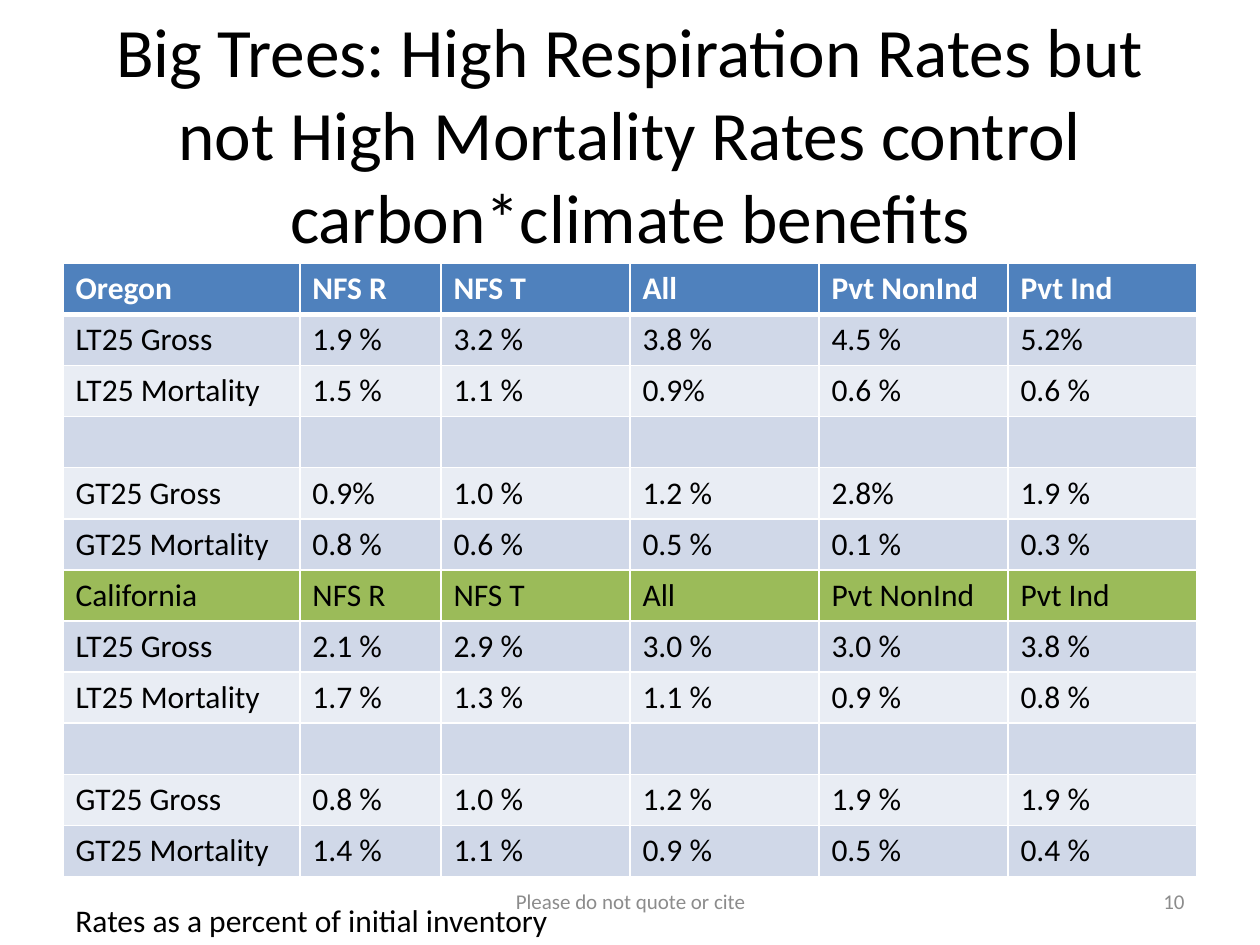
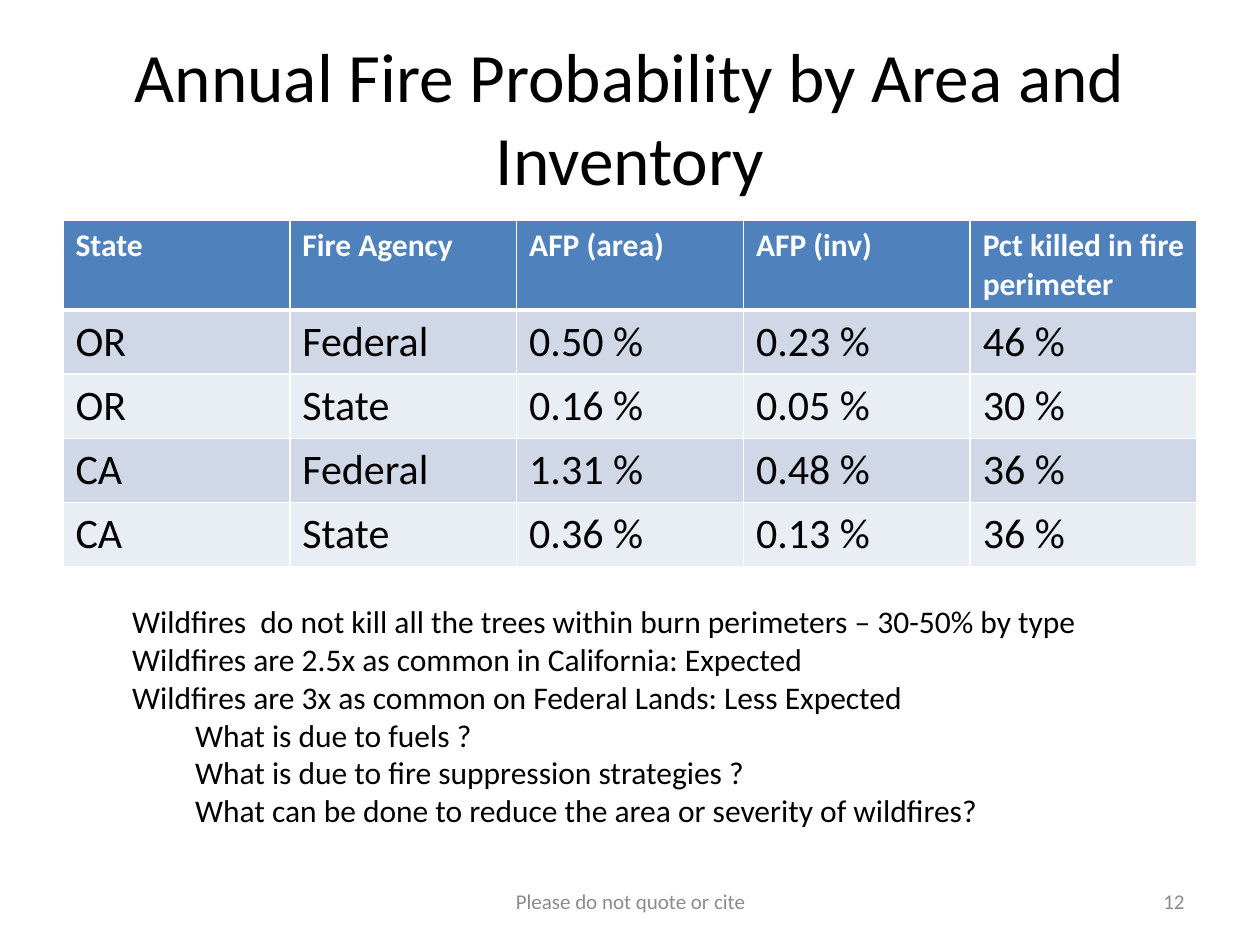
"""Build two slides of tables on forest carbon and wildfire rates."""
from dataclasses import dataclass

from lxml.etree import SubElement
from pptx import Presentation
from pptx.dml.color import RGBColor
from pptx.enum.text import MSO_ANCHOR, PP_ALIGN
from pptx.oxml.ns import qn
from pptx.util import Inches, Pt


@dataclass(frozen=True)
class Theme:
    """Colours, font and type sizes shared by the slides."""
    font: str = "Calibri"
    ink: str = "000000"
    white: str = "FFFFFF"
    header: str = "4F81BD"
    section: str = "9BBB59"
    bands: tuple = ("D0D8E8", "E9EDF4")
    muted: str = "8C8C8C"
    title_size: float = 39.6
    body_size: float = 18
    large_size: float = 24
    footer_size: float = 12
    thin_rule: float = 1
    thick_rule: float = 3


THEME = Theme()
MARGIN = 0.5
OWNERS = ["NFS R", "NFS T", "All", "Pvt NonInd", "Pvt Ind"]
MORTALITY_ROWS = [
    ["Oregon", *OWNERS],
    ["LT25 Gross", "1.9 %", "3.2 %", "3.8 %", "4.5 %", "5.2%"],
    ["LT25 Mortality", "1.5 %", "1.1 %", "0.9%", "0.6 %", "0.6 %"],
    [""] * 6,
    ["GT25 Gross", "0.9%", "1.0 %", "1.2 %", "2.8%", "1.9 %"],
    ["GT25 Mortality", "0.8 %", "0.6 %", "0.5 %", "0.1 %", "0.3 %"],
    ["California", *OWNERS],
    ["LT25 Gross", "2.1 %", "2.9 %", "3.0 %", "3.0 %", "3.8 %"],
    ["LT25 Mortality", "1.7 %", "1.3 %", "1.1 %", "0.9 %", "0.8 %"],
    [""] * 6,
    ["GT25 Gross", "0.8 %", "1.0 %", "1.2 %", "1.9 %", "1.9 %"],
    ["GT25 Mortality", "1.4 %", "1.1 %", "0.9 %", "0.5 %", "0.4 %"],
]
CALIFORNIA_ROW = 6
FIRE_ROWS = [
    ["State", "Fire Agency", "AFP (area)", "AFP (inv)", "Pct killed in fire perimeter"],
    ["OR", "Federal", "0.50 %", "0.23 %", "46 %"],
    ["OR", "State", "0.16 %", "0.05 %", "30 %"],
    ["CA", "Federal", "1.31 %", "0.48 %", "36 %"],
    ["CA", "State", "0.36 %", "0.13 %", "36 %"],
]
FINDINGS = [
    "Wildfires  do not kill all the trees within burn perimeters – 30-50% by type",
    "Wildfires are 2.5x as common in California: Expected",
    "Wildfires are 3x as common on Federal Lands: Less Expected",
]
QUESTIONS = [
    "What is due to fuels ?",
    "What is due to fire suppression strategies ?",
    "What can be done to reduce the area or severity of wildfires?",
]


def style_paragraph(para, size, color, bold=False):
    """Give a paragraph and its runs the theme font, a size and a colour."""
    para.font.size = Pt(size)
    for span in para.runs:
        span.font.name = THEME.font
        span.font.size = Pt(size)
        span.font.bold = bold
        span.font.color.rgb = RGBColor.from_string(color)


def add_text(page, lines, area, size=THEME.body_size, color=THEME.ink,
             align=PP_ALIGN.LEFT, anchor=MSO_ANCHOR.TOP):
    """Add a wrapping text box with one paragraph per line."""
    box = page.shapes.add_textbox(*map(Inches, area))
    frame = box.text_frame
    frame.word_wrap = True
    frame.vertical_anchor = anchor
    frame.text = "\n".join(lines)
    for para in frame.paragraphs:
        para.alignment = align
        style_paragraph(para, size, color)
    return box


def indent_paragraph(para, inches):
    """Set the left margin of a paragraph."""
    para._p.get_or_add_pPr().set("marL", str(Inches(inches)))


def add_title(page, title, top):
    """Add the centred slide title."""
    add_text(page, [title], (MARGIN, top, 9, 1.25), THEME.title_size,
             align=PP_ALIGN.CENTER, anchor=MSO_ANCHOR.MIDDLE)


def add_footer(page, number):
    """Add the citation notice and the page number."""
    for text, left, width, align in (
        ("Please do not quote or cite", 3.42, 3.17, PP_ALIGN.CENTER),
        (str(number), 7.17, 2.33, PP_ALIGN.RIGHT),
    ):
        add_text(page, [text], (left, 6.95, width, 0.4), THEME.footer_size,
                 THEME.muted, align, MSO_ANCHOR.MIDDLE)


def set_borders(cell, top, bottom):
    """Draw white rules around a cell."""
    properties = cell._tc.get_or_add_tcPr()
    widths = {"L": THEME.thin_rule, "R": THEME.thin_rule, "T": top, "B": bottom}
    for side, width in widths.items():
        line = SubElement(properties, qn(f"a:ln{side}"), w=str(Pt(width)))
        fill = SubElement(line, qn("a:solidFill"))
        SubElement(fill, qn("a:srgbClr"), val=THEME.white)


def style_cell(cell, row_index, fill, size):
    """Format a cell according to its row."""
    is_header = row_index == 0
    set_borders(cell,
                THEME.thick_rule if row_index == 1 else THEME.thin_rule,
                THEME.thick_rule if is_header else THEME.thin_rule)
    cell.fill.solid()
    cell.fill.fore_color.rgb = RGBColor.from_string(fill)
    color = THEME.white if is_header else THEME.ink
    style_paragraph(cell.text_frame.paragraphs[0], size, color, is_header)


def add_rate_table(page, rows, top, widths, heights,
                   size=THEME.body_size, section_rows=()):
    """Add a banded table with a blue header and optional section rows."""
    frame = page.shapes.add_table(
        len(rows), len(widths), Inches(MARGIN), Inches(top),
        Inches(sum(widths)), Inches(sum(heights)))
    table = frame.table
    for column, width in zip(table.columns, widths):
        column.width = Inches(width)
    for row_index, values in enumerate(rows):
        table.rows[row_index].height = Inches(heights[row_index])
        fill = THEME.bands[(row_index - 1) % 2]
        if row_index == 0:
            fill = THEME.header
        elif row_index in section_rows:
            fill = THEME.section
        row_size = THEME.body_size if row_index == 0 else size
        for column_index, value in enumerate(values):
            cell = table.cell(row_index, column_index)
            cell.text = value
            style_cell(cell, row_index, fill, row_size)


def add_mortality_page(deck):
    """Add the slide comparing growth and mortality by owner."""
    page = deck.slides.add_slide(deck.slide_layouts[6])
    add_title(page, "Big Trees: High Respiration Rates but not High Mortality "
                    "Rates control carbon*climate benefits", 0.43)
    add_rate_table(page, MORTALITY_ROWS, 2.09, [1.88, 1.12] + [1.5] * 4,
                   [4.87 / len(MORTALITY_ROWS)] * len(MORTALITY_ROWS),
                   section_rows=(CALIFORNIA_ROW,))
    add_text(page, ["Rates as a percent of initial inventory"],
             (MARGIN, 7.1, 5.91, 0.4))
    add_footer(page, 10)


def add_fire_page(deck):
    """Add the slide on annual fire probability."""
    page = deck.slides.add_slide(deck.slide_layouts[6])
    add_title(page, "Annual Fire Probability by Area and Inventory", 0.3)
    add_rate_table(page, FIRE_ROWS, 1.75, [1.8] * 5, [0.71] + [0.51] * 4,
                   THEME.large_size)
    box = add_text(page, FINDINGS + QUESTIONS, (0.95, 4.73, 7.75, 1.92))
    for para in box.text_frame.paragraphs[len(FINDINGS):]:
        indent_paragraph(para, 0.5)
    add_footer(page, 12)


def main():
    """Build and save the deck."""
    deck = Presentation()
    deck.slide_width, deck.slide_height = Inches(10), Inches(7.5)
    add_mortality_page(deck)
    add_fire_page(deck)
    deck.save("out.pptx")


if __name__ == "__main__":
    main()
